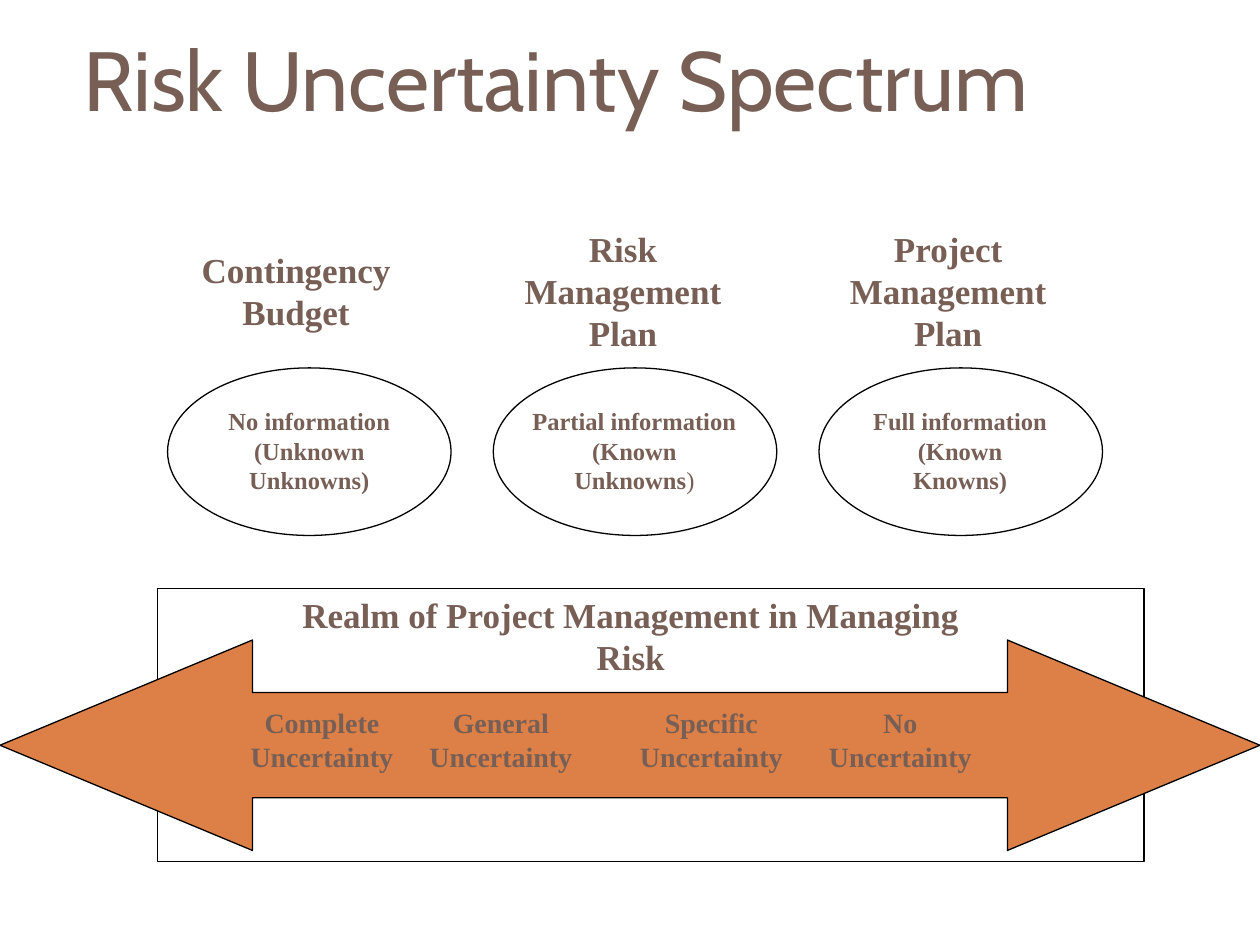
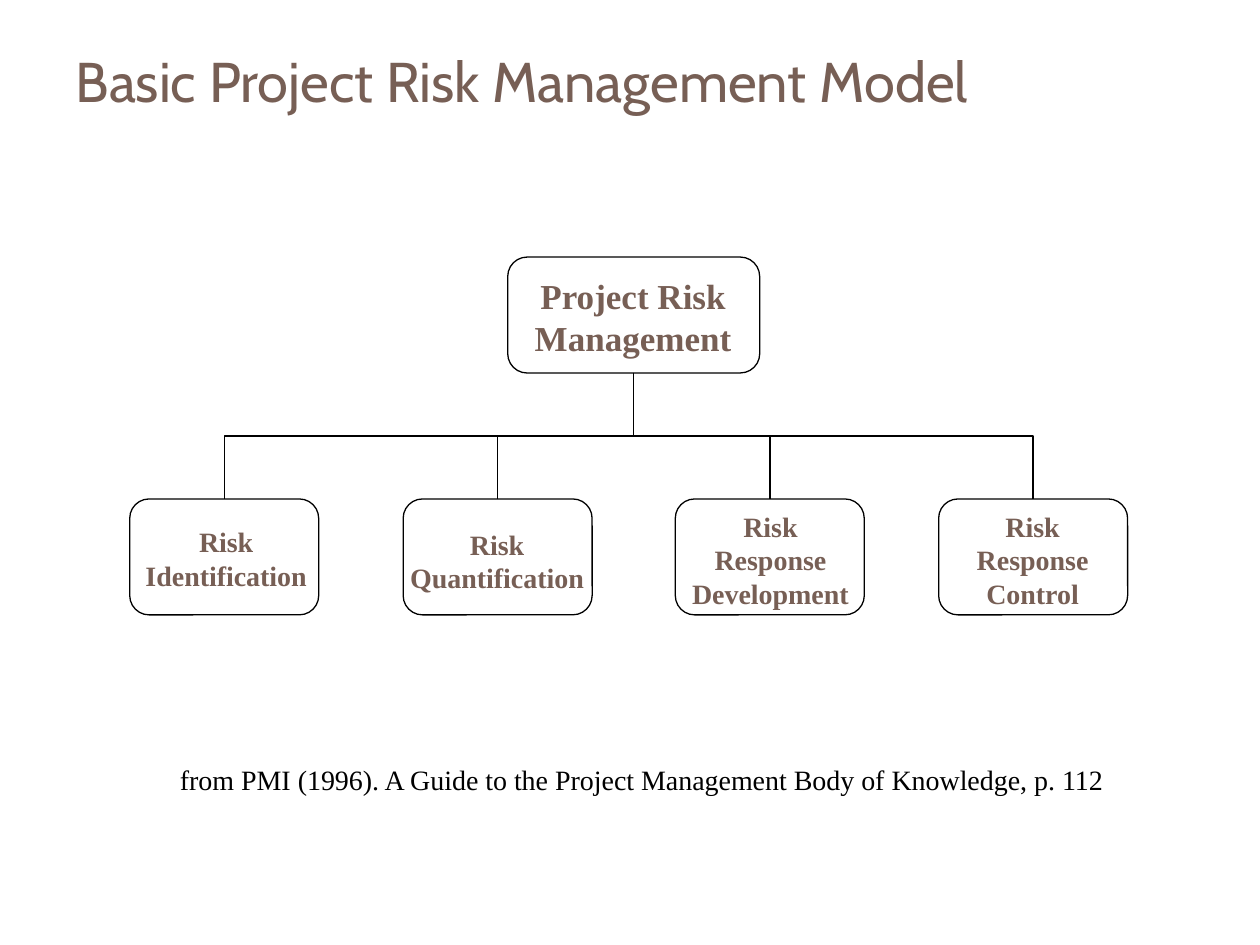
from dataclasses import dataclass
from pptx import Presentation
from pptx.dml.color import RGBColor
from pptx.enum.shapes import MSO_CONNECTOR, MSO_SHAPE
from pptx.enum.text import MSO_ANCHOR, MSO_AUTO_SIZE, PP_ALIGN
from pptx.oxml.ns import qn
from pptx.util import Inches, Pt
from lxml.etree import SubElement


@dataclass(frozen=True)
class Theme:
    brown: RGBColor = RGBColor(0x77, 0x5F, 0x55)
    orange: RGBColor = RGBColor(0xDD, 0x80, 0x47)
    black: RGBColor = RGBColor(0, 0, 0)
    head: str = "Cabin"
    body: str = "Times New Roman"
    huge: int = 48
    large: int = 32
    big: int = 20
    mid: int = 16
    small: int = 14
    rule: float = 0.75


look = Theme()


def text(slide, words, at, size=look.mid, color=look.brown, face=look.body,
         bold=True, align=PP_ALIGN.CENTER, anchor=MSO_ANCHOR.MIDDLE,
         wrap=False, pad=0.1, title=False):
    """Write one paragraph per line of words, in the title or a new box."""
    at = [Inches(v) for v in at]
    if title:
        box = slide.shapes.title
        box.left, box.top, box.width, box.height = at
    else:
        box = slide.shapes.add_textbox(*at)
    frame = box.text_frame
    frame.text = words
    frame.auto_size = MSO_AUTO_SIZE.NONE
    frame.word_wrap = wrap
    frame.vertical_anchor = anchor
    frame.margin_left = Inches(pad)
    frame.margin_right = Inches(0.1 if title else pad)
    for para in frame.paragraphs:
        para.alignment = align
        for run in para.runs:
            font = run.font
            font.name, font.size, font.bold = face, Pt(size), bold
            font.color.rgb = color
    return frame


def shape(slide, kind, at, fill=None, adjust=()):
    """Draw a black-lined preset shape."""
    item = slide.shapes.add_shape(kind, *[Inches(v) for v in at])
    item.shadow.inherit = False
    if fill is None:
        item.fill.background()
    else:
        item.fill.solid()
        item.fill.fore_color.rgb = fill
    item.line.color.rgb = look.black
    item.line.width = Pt(look.rule)
    for i, value in enumerate(adjust):
        item.adjustments[i] = value


deck = Presentation()
deck.slide_width, deck.slide_height = Inches(10), Inches(7.5)
plain = deck.slide_layouts[5]
heading = dict(face=look.head, bold=False, align=PP_ALIGN.LEFT,
               wrap=True, title=True)

# Slide 1: title
slide = deck.slides.add_slide(plain)
text(slide, "Risk Uncertainty Spectrum", (0.42, 0.33, 8.35, 0.58),
     size=look.huge, pad=0.24, **heading)

# Realm frame and arrow
shape(slide, MSO_SHAPE.RECTANGLE, (1.25, 4.67, 7.83, 2.17))
text(slide, "Realm of Project Management in Managing Risk",
     (2, 4.83, 6.01, 0.43), size=look.big, wrap=True, pad=0.11)
shape(slide, MSO_SHAPE.LEFT_RIGHT_ARROW, (0, 5.08, 10, 1.67),
      fill=look.orange, adjust=(0.5, 1.2))

# Degrees of uncertainty
for left, degree in ((1.88, "Complete"), (3.3, "General"),
                     (4.97, "Specific"), (6.47, "No")):
    text(slide, degree + "\nUncertainty", (left, 5.55, 1.35, 0.64))

# Ovals with the state of information
states = (
    ("No information\n(Unknown Unknowns)", 1.42, 2.07),
    ("Partial information\n(Known Unknowns", 4.1, 1.87),
    ("Full information\n(Known Knowns)", 6.79, 1.66),
)
for i, (state, left, width) in enumerate(states):
    shape(slide, MSO_SHAPE.OVAL, (1.33 + 2.585 * i, 2.92, 2.25, 1.33))
    frame = text(slide, state, (left, 3.29, width, 0.57),
                 size=look.small, wrap=True, pad=0.11)
    if not state.endswith(")"):
        # The closing bracket is in regular weight
        run = frame.paragraphs[-1].add_run()
        run.text = ")"
        run.font.name, run.font.size = look.body, Pt(look.small)
        run.font.bold = False
        run.font.color.rgb = look.brown

# Plans above the ovals
for plan, left, width, wrap in (
        ("Contingency\nBudget", 1.5, 1.7, False),
        ("Risk Management\nPlan", 3.76, 2.37, True),
        ("Project\nManagement Plan", 6.34, 2.37, True)):
    text(slide, plan, (left, 1.92, width, 0.77), size=look.big,
         wrap=wrap, pad=0.12)

# Slide 2: title and source
slide = deck.slides.add_slide(plain)
text(slide, "Basic Project Risk Management Model", (0.5, 0.33, 8.43, 0.61),
     size=look.large, **heading)
text(slide, "from PMI (1996). A Guide to the Project Management Body of "
     "Knowledge, p. 112", (1.33, 6, 7.53, 0.37), color=look.black,
     bold=False, align=PP_ALIGN.LEFT, anchor=MSO_ANCHOR.TOP)

# Root of the tree
root, base, leaf = 5.03, 2.96, 3.96
tall, curve = 0.92, (0.167,)
shape(slide, MSO_SHAPE.ROUNDED_RECTANGLE, (root - 1, base - tall, 2, tall),
      adjust=curve)
text(slide, "Project Risk\nManagement", (4.11, 2.13, 1.83, 0.77),
     size=look.big)

# Branches: box left, label, label place
parts = (
    (1.03, "Risk\nIdentification", (1.05, 4.11, 1.49, 0.64)),
    (3.2, "Risk\nQuantification", (3.15, 4.13, 1.59, 0.64)),
    (5.36, "Risk\nResponse\nDevelopment", (5.36, 3.99, 1.51, 0.9)),
    (7.45, "Risk\nResponse\nControl", (7.65, 3.99, 1.09, 0.9)),
)
for left, label, place in parts:
    shape(slide, MSO_SHAPE.ROUNDED_RECTANGLE, (left, leaf, 1.5, tall),
          adjust=curve)
    text(slide, label, place)

    # An elbow lies on its side, then turns to run downwards
    end = left + 0.75
    mid, level = (root + end) / 2, (base + leaf) / 2
    side = 1 if end < root else -1
    reach, span = side * (leaf - base) / 2, abs(end - root) / 2
    line = slide.shapes.add_connector(
        MSO_CONNECTOR.ELBOW, Inches(mid - reach), Inches(level - span),
        Inches(mid + reach), Inches(level + span))
    line.line.color.rgb = look.black
    line.line.width = Pt(look.rule)
    props = line._element.spPr
    props.xfrm.set("rot", str(side * 90 % 360 * 60000))
    SubElement(props, qn("a:effectLst"))

deck.save("out.pptx")
